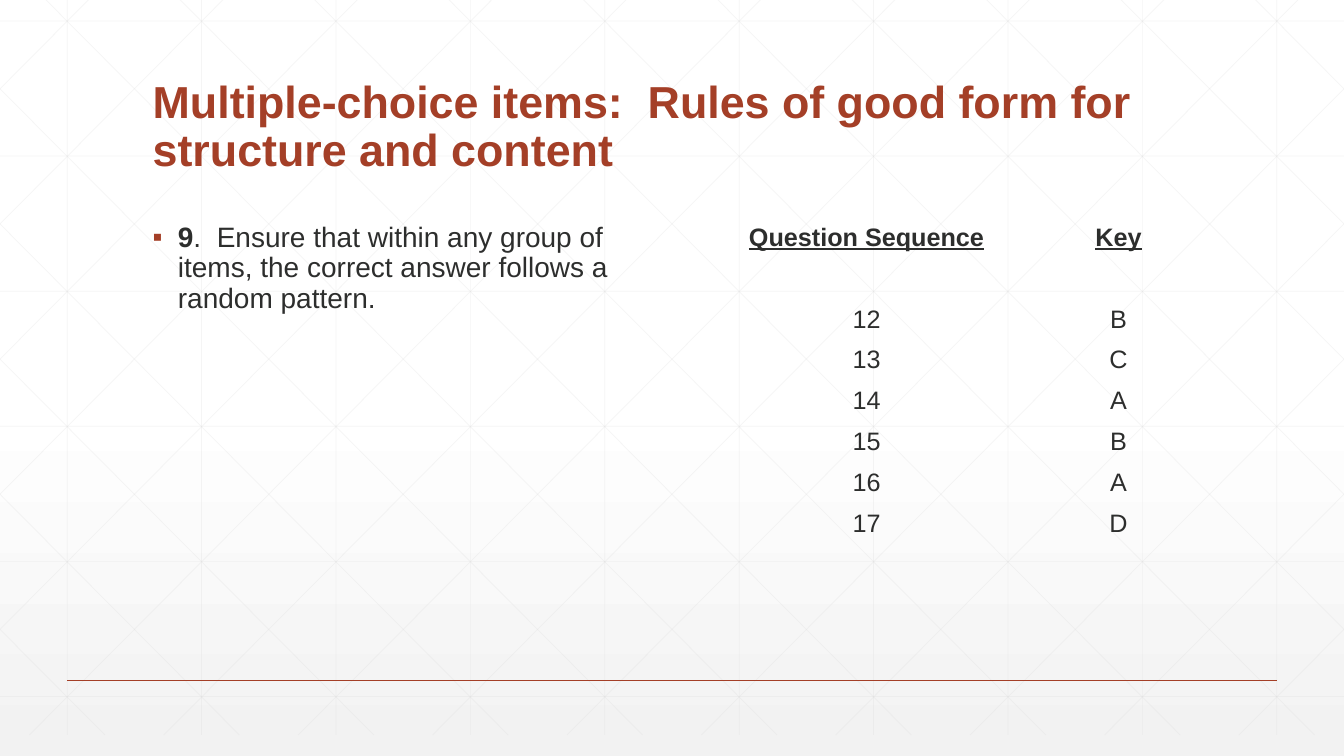
from copy import deepcopy

from lxml.etree import SubElement
from pptx import Presentation
from pptx.dml.color import RGBColor as Rgb
from pptx.enum.shapes import MSO_CONNECTOR as Connector
from pptx.enum.text import MSO_ANCHOR as Anchor, PP_ALIGN as Align
from pptx.oxml.ns import qn
from pptx.util import Pt

WIDTH, HEIGHT = 960, 540
FONT = "Arial"
COLORS = {"accent": "A43F27", "text": "2D2E2D", "grid": "D9D9D9",
          "white": "FFFFFF", "shade": "F2F2F2"}
NO_GRID_STYLE = "{2D5ABB26-0587-4C30-8999-92F81FD0307C}"

TITLE = "Multiple-choice items:  Rules of good form for structure and content"
RULE = [("9", True),
        (".  Ensure that within any group of items, the correct answer follows a random pattern.", False)]
ANSWERS = [("Question Sequence", "Key"), ("", ""), ("12", "B"), ("13", "C"),
           ("14", "A"), ("15", "B"), ("16", "A"), ("17", "D")]


def color(name):
    return Rgb.from_string(COLORS[name])


def add_run(paragraph, text, size, tint="text", bold=False, underline=False):
    run = paragraph.add_run()
    run.text = text
    font = run.font
    font.name, font.size, font.bold, font.underline = FONT, Pt(size), bold, underline
    font.color.rgb = color(tint)


def add_line(slide, start, end, tint, weight, alpha=None):
    line = slide.shapes.add_connector(
        Connector.STRAIGHT, *(Pt(round(value, 2)) for value in (*start, *end)))
    line.line.width = Pt(weight)
    line.line.color.rgb = color(tint)
    properties = line._element.spPr
    SubElement(properties, qn("a:effectLst"))
    if alpha:
        stroke = properties.find(".//" + qn("a:srgbClr"))
        SubElement(stroke, qn("a:alpha")).set("val", str(alpha * 1000))


def shade_background(slide):
    fill = slide.background.fill
    fill.gradient()
    fill.gradient_angle = 270
    top, bottom = fill.gradient_stops
    top.color.rgb, bottom.color.rgb = color("white"), color("shade")
    stops = slide.element.find(".//" + qn("a:gsLst"))
    middle = deepcopy(stops[0])
    middle.set("pos", "53000")
    stops.insert(1, middle)


def draw_grid(slide, left, top, width, height):
    right, bottom = left + width, top + height
    run = 537
    slope = height / run
    segments = [((left + 48 + 96 * i, top), (left + 48 + 96 * i, bottom)) for i in range(10)]
    segments += [((left, top + 30 + 96.5 * i), (right, top + 30 + 96.5 * i)) for i in range(6)]
    for i in range(-5, 10):
        origin = left + 18 + 96 * i
        ends = [(x, top + (x - origin) * slope)
                for x in (max(origin, left), min(origin + run, right))]
        segments.append(ends)
        segments.append([(left + right - x, y) for x, y in ends])
    for start, end in segments:
        add_line(slide, start, end, "grid", 0.5, alpha=25)


def add_text_frame(slide, left, top, width, height):
    frame = slide.shapes.add_textbox(Pt(left), Pt(top), Pt(width), Pt(height)).text_frame
    frame.word_wrap = True
    frame.paragraphs[0].line_spacing = 0.9
    return frame


def add_title(slide, left, top, width, height):
    frame = add_text_frame(slide, left, top, width, height)
    frame.vertical_anchor = Anchor.BOTTOM
    add_run(frame.paragraphs[0], TITLE, 32, "accent", bold=True)


def add_rule(slide, left, top, width, height):
    rule = add_text_frame(slide, left, top, width, height).paragraphs[0]
    rule.space_before = Pt(18)
    properties = rule._p.get_or_add_pPr()
    properties.set("marL", str(Pt(18)))
    properties.set("indent", str(Pt(-18)))
    bullet_color = SubElement(properties, qn("a:buClr"))
    SubElement(bullet_color, qn("a:srgbClr")).set("val", COLORS["accent"])
    SubElement(properties, qn("a:buFont")).set("typeface", FONT)
    SubElement(properties, qn("a:buChar")).set("char", "▪")
    for text, bold in RULE:
        add_run(rule, text, 20, bold=bold)


def add_answer_key(slide, left, top, width, height):
    key = slide.shapes.add_table(len(ANSWERS), 2, Pt(left), Pt(top), Pt(width), Pt(height)).table
    key.first_row = key.horz_banding = False
    key._tbl.tblPr.find(qn("a:tableStyleId")).text = NO_GRID_STYLE
    sequence_width = 242
    key.columns[0].width = Pt(sequence_width)
    key.columns[1].width = Pt(width - sequence_width)
    for row, answers in enumerate(ANSWERS):
        for column, text in enumerate(answers):
            cell = key.cell(row, column)
            cell.fill.background()
            paragraph = cell.text_frame.paragraphs[0]
            paragraph.alignment = Align.CENTER
            if text:
                add_run(paragraph, text, 18, bold=row == 0, underline=row == 0)


def build_rule_slide(deck):
    slide = deck.slides.add_slide(deck.slide_layouts[6])
    shade_background(slide)
    draw_grid(slide, 0, -15, WIDTH, 540)
    add_line(slide, (48, 486), (WIDTH - 48, 486), "accent", 1)
    add_title(slide, 102, 39.6, 756, 90)
    add_rule(slide, 102, 156, 360, 300)
    add_answer_key(slide, 498, 156, 360, 233.6)


def main():
    deck = Presentation()
    deck.slide_width, deck.slide_height = Pt(WIDTH), Pt(HEIGHT)
    build_rule_slide(deck)
    deck.save("out.pptx")


if __name__ == "__main__":
    main()
